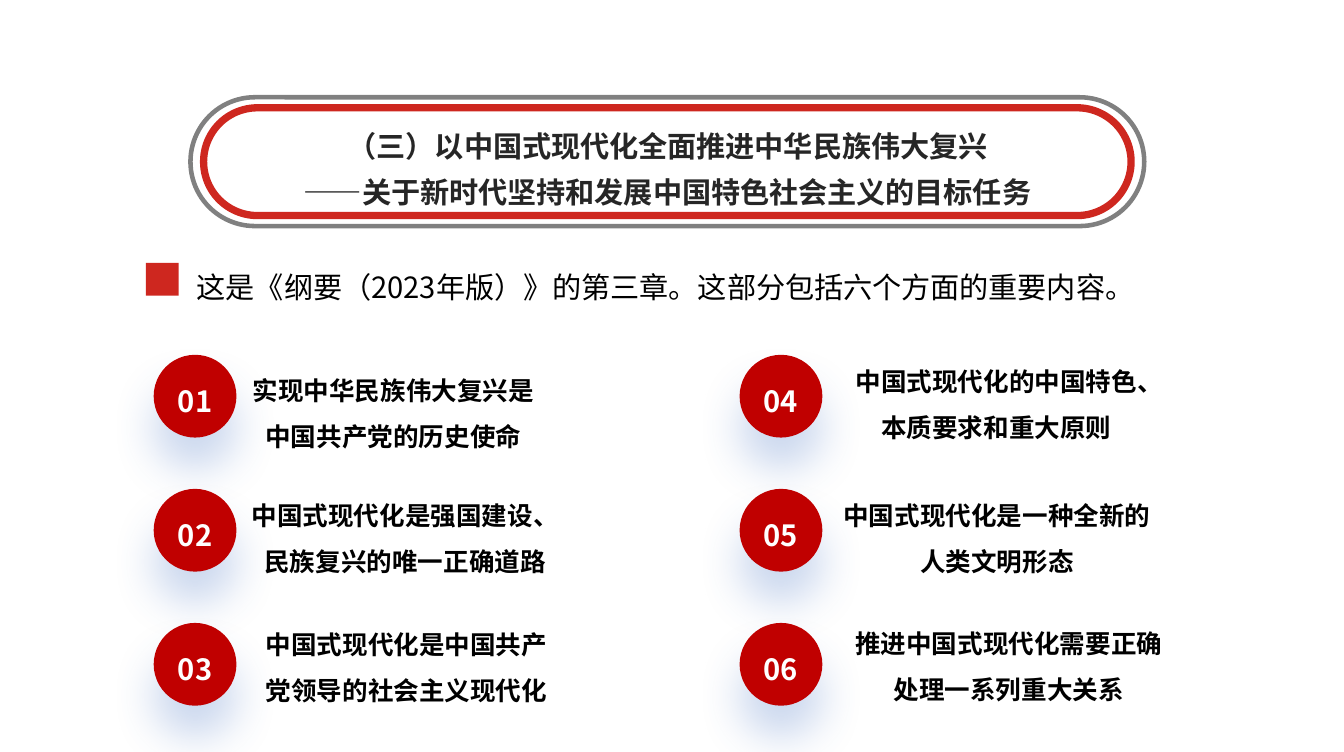
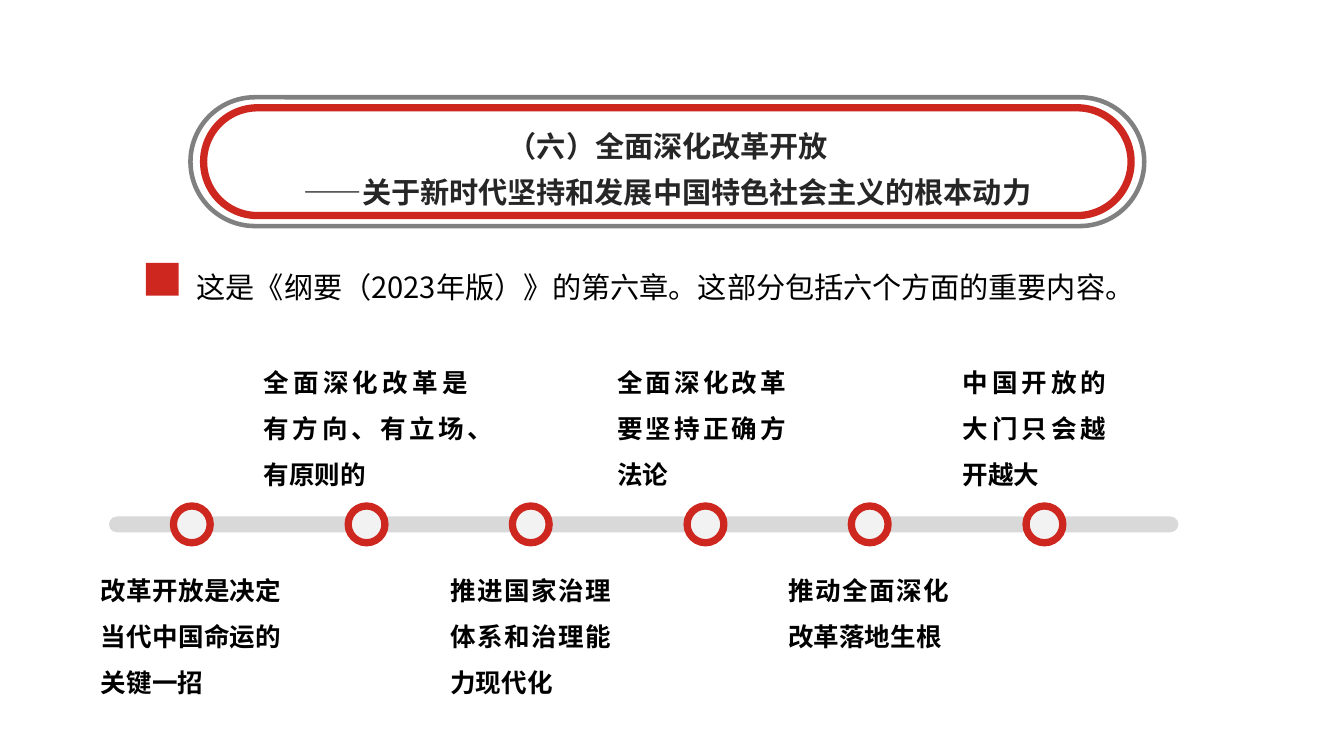
from dataclasses import dataclass

from lxml.etree import SubElement
from pptx import Presentation
from pptx.dml.color import RGBColor
from pptx.enum.shapes import MSO_SHAPE
from pptx.enum.text import MSO_ANCHOR, MSO_AUTO_SIZE, PP_ALIGN
from pptx.oxml.ns import qn
from pptx.util import Inches, Pt


@dataclass(frozen=True)
class Theme:
    font: str = "Noto Sans CJK SC"
    red: str = "CE271F"
    badge: str = "C00000"
    ring: str = "808080"
    track: str = "D9D9D9"
    dot: str = "F2F2F2"
    title: str = "262626"
    text: str = "000000"
    white: str = "FFFFFF"
    glow: str = "4472C4"
    heading_size: int = 16
    label_size: int = 14
    thin: float = 2.5
    thick: float = 4


THEME = Theme()


def color(value):
    return RGBColor.from_string(value)


def add_part(shapes, kind, box, fill=None, line=None, width=0):
    """Add a flat preset shape; box is left, top, width, height in inches."""
    shape = shapes.add_shape(kind, *map(Inches, box))
    shape.shadow.inherit = False
    if kind == MSO_SHAPE.ROUNDED_RECTANGLE:
        shape.adjustments[0] = 0.5
    if fill:
        shape.fill.solid()
        shape.fill.fore_color.rgb = color(fill)
    else:
        shape.fill.background()
    if line:
        shape.line.color.rgb = color(line)
        shape.line.width = Pt(width)
    else:
        shape.line.fill.background()
    return shape


def write_paragraph(paragraph, text, align, spacing, size, ink, bold=True):
    paragraph.alignment = align
    paragraph.line_spacing = spacing
    run = paragraph.add_run()
    run.text = text
    run.font.size = Pt(size)
    run.font.bold = bold
    run.font.name = THEME.font
    run.font.color.rgb = color(ink)
    east_asian = SubElement(run.font._element, qn("a:ea"))
    east_asian.set("typeface", THEME.font)


def add_text(slide, box, lines, align, spacing=1.5, size=THEME.label_size,
             ink=THEME.text, bold=True):
    frame = slide.shapes.add_textbox(*map(Inches, box)).text_frame
    frame.word_wrap = True
    frame.auto_size = MSO_AUTO_SIZE.SHAPE_TO_FIT_TEXT
    for index, text in enumerate(lines):
        paragraph = frame.add_paragraph() if index else frame.paragraphs[0]
        write_paragraph(paragraph, text, align, spacing, size, ink, bold)


def add_glow(shape):
    """Give a shape a soft coloured shadow straight below it."""
    effects = shape._element.spPr.find(qn("a:effectLst"))
    shadow = SubElement(effects, qn("a:outerShdw"), blurRad=str(Pt(24)),
                        dist=str(Pt(17)), dir="5400000", algn="t",
                        rotWithShape="0")
    tint = SubElement(shadow, qn("a:srgbClr"), val=THEME.glow)
    SubElement(tint, qn("a:alpha"), val="28000")


def add_banner(slide, box, lines):
    left, top, width, height = box
    # Double ring
    rings = slide.shapes.add_group_shape().shapes
    add_part(rings, MSO_SHAPE.ROUNDED_RECTANGLE, box,
             line=THEME.ring, width=THEME.thin)
    inner = (left + 0.1, top + 0.08, width - 0.2, height - 0.16)
    add_part(rings, MSO_SHAPE.ROUNDED_RECTANGLE, inner,
             line=THEME.red, width=THEME.thick)
    # Title
    add_text(slide, (left + 0.25, top + 0.11, 6.77, 0.75), lines,
             PP_ALIGN.CENTER, 1.3, THEME.heading_size, THEME.title)


def add_intro(slide, box, text):
    left, top, width, height = box
    add_part(slide.shapes, MSO_SHAPE.RECTANGLE,
             (left, top + 0.13, 0.25, 0.25), THEME.red)
    add_text(slide, (left + 0.29, top, width - 0.29, height), [text],
             PP_ALIGN.JUSTIFY, size=THEME.heading_size, bold=False)


def add_chapter_slide(presentation, chapter, title, subject):
    """Make a blank slide with the heading that all chapters share."""
    slide = presentation.slides.add_slide(presentation.slide_layouts[6])
    add_banner(slide, (1.45, 0.74, 7.26, 0.98),
               [f"（{chapter}）{title}",
                f"——关于新时代坚持和发展中国特色社会主义的{subject}"])
    add_intro(slide, (1.11, 1.87, 8.19, 0.44),
              f"这是《纲要（2023年版）》的第{chapter}章。"
              "这部分包括六个方面的重要内容。")
    return slide


def add_badge(slide, box, number):
    badge = add_part(slide.shapes, MSO_SHAPE.OVAL, box, THEME.badge)
    add_glow(badge)
    frame = badge.text_frame
    frame.vertical_anchor = MSO_ANCHOR.MIDDLE
    frame.margin_left = frame.margin_right = Inches(0.08)
    frame.margin_top = frame.margin_bottom = Inches(0.04)
    paragraph = frame.paragraphs[0]
    paragraph.space_before = paragraph.space_after = Pt(0.8)
    write_paragraph(paragraph, f"{number:02d}", PP_ALIGN.CENTER, 1.25,
                    THEME.heading_size, THEME.white)


def add_numbered_grid(slide, box, items, rows=3):
    """Fill two columns; each item holds its text, label offset and width."""
    left, top, width, height = box
    size = 0.63
    column_step = width - size
    row_step = (height - size) / (rows - 1)
    for index, (text, shift_x, shift_y, label_width) in enumerate(items):
        column, row = divmod(index, rows)
        x, y = left + column * column_step, top + row * row_step
        add_badge(slide, (x, y, size, size), index + 1)
        add_text(slide, (x + shift_x, y + shift_y, label_width, 0.75),
                 [text], PP_ALIGN.CENTER)


def add_timeline(slide, box, items):
    """Set dots along a track, with labels below and above it in turn."""
    left, top, width, height = box
    add_part(slide.shapes, MSO_SHAPE.ROUNDED_RECTANGLE, box, THEME.track)
    size, pair_step, inner_step = 0.28, 2.58, 1.33
    dot_top = top + (height - size) / 2
    for index, (text, shift_x, label_width, label_height) in enumerate(items):
        pair, above = divmod(index, 2)
        x = left + 0.49 + pair * pair_step + above * inner_step
        add_part(slide.shapes, MSO_SHAPE.OVAL, (x, dot_top, size, size),
                 THEME.dot, THEME.red, THEME.thick)
        label_top = top - 1.3 if above else top + 0.28
        add_text(slide, (x + shift_x, label_top, label_width, label_height),
                 [text], PP_ALIGN.JUSTIFY)


# Label text, offset from the badge (right, down), label width
GOALS = [
    ("实现中华民族伟大复兴是中国共产党的历史使命", 0.57, -0.01, 2.51),
    ("中国式现代化是强国建设、民族复兴的唯一正确道路", 0.6, -0.08, 2.63),
    ("中国式现代化是中国共产党领导的社会主义现代化", 0.66, -0.12, 2.53),
    ("中国式现代化的中国特色、本质要求和重大原则", 0.7, -0.08, 2.51),
    ("中国式现代化是一种全新的人类文明形态", 0.63, -0.08, 2.66),
    ("推进中国式现代化需要正确处理一系列重大关系", 0.7, -0.13, 2.7),
]

# Label text, offset from the dot, label width and height
REFORMS = [
    ("改革开放是决定当代中国命运的关键一招", -0.65, 1.57, 1.11),
    ("全面深化改革是有方向、有立场、有原则的", -0.74, 1.75, 1.11),
    ("推进国家治理体系和治理能力现代化", -0.57, 1.42, 1.11),
    ("全面深化改革要坚持正确方法论", -0.63, 1.48, 1.11),
    ("推动全面深化改革落地生根", -0.58, 1.42, 0.75),
    ("中国开放的大门只会越开越大", -0.58, 1.29, 1.11),
]


def main():
    presentation = Presentation()
    presentation.slide_width = Inches(10.23)
    presentation.slide_height = Inches(5.722)

    goals = add_chapter_slide(
        presentation, "三", "以中国式现代化全面推进中华民族伟大复兴", "目标任务")
    add_numbered_grid(goals, (1.17, 2.7, 5.09, 2.67), GOALS)

    reforms = add_chapter_slide(presentation, "六", "全面深化改革开放", "根本动力")
    add_timeline(reforms, (0.83, 3.93, 8.14, 0.12), REFORMS)

    presentation.save("out.pptx")


if __name__ == "__main__":
    main()
